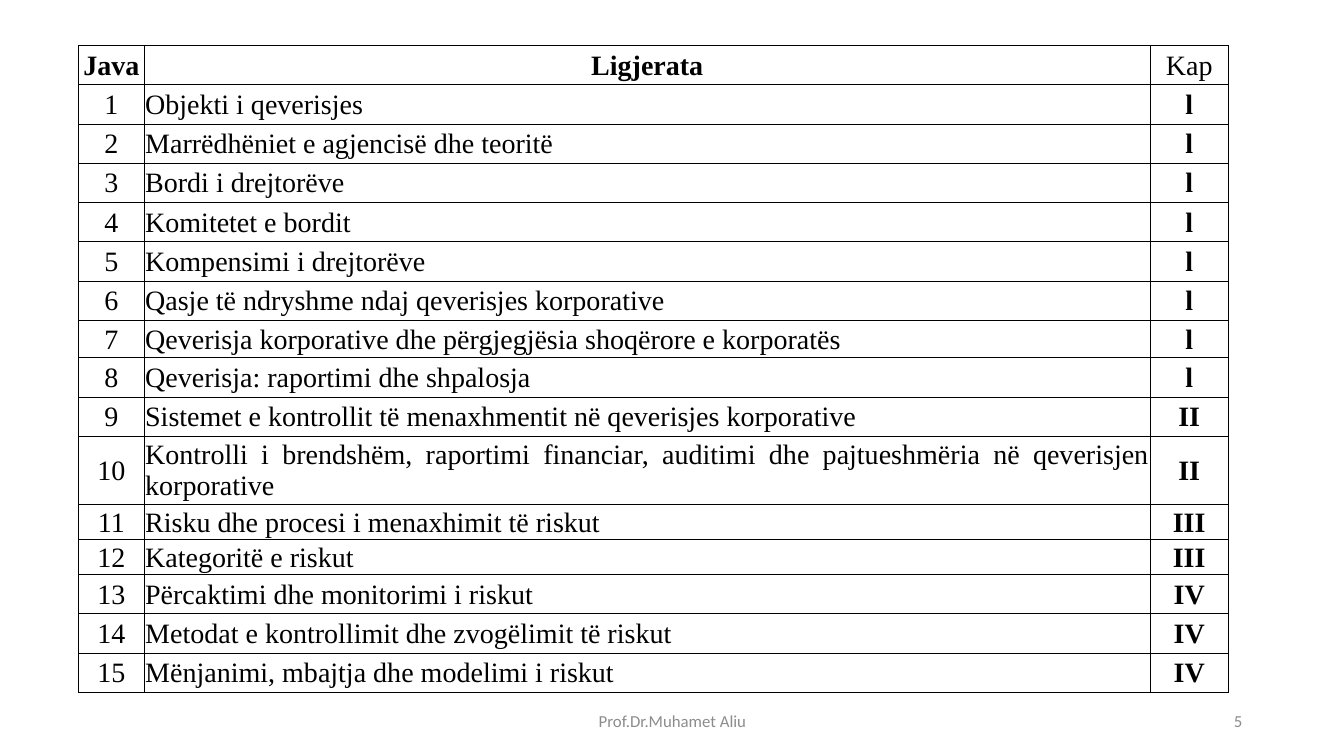
from dataclasses import dataclass

from lxml.etree import SubElement
from pptx import Presentation
from pptx.dml.color import RGBColor
from pptx.enum.text import MSO_ANCHOR, PP_ALIGN
from pptx.oxml.ns import qn
from pptx.util import Inches, Pt


@dataclass(frozen=True)
class Theme:
    ink: str = "000000"
    muted: str = "8C8C8C"
    table_font: str = "Times New Roman"
    footer_font: str = "Calibri"
    table_size: int = 20
    footer_size: int = 12
    border_width: float = 0.5


LECTURES = [
    ("Objekti i qeverisjes", "l"),
    ("Marrëdhëniet e agjencisë dhe teoritë", "l"),
    ("Bordi i drejtorëve", "l"),
    ("Komitetet e bordit", "l"),
    ("Kompensimi i drejtorëve", "l"),
    ("Qasje të ndryshme ndaj qeverisjes korporative", "l"),
    ("Qeverisja korporative dhe përgjegjësia shoqërore e korporatës", "l"),
    ("Qeverisja: raportimi dhe shpalosja", "l"),
    ("Sistemet e kontrollit të menaxhmentit në qeverisjes korporative", "II"),
    ("Kontrolli i brendshëm, raportimi financiar, auditimi dhe "
     "pajtueshmëria në qeverisjen korporative", "II"),
    ("Risku dhe procesi i menaxhimit të riskut", "III"),
    ("Kategoritë e riskut", "III"),
    ("Përcaktimi dhe monitorimi i riskut", "IV"),
    ("Metodat e kontrollimit dhe zvogëlimit të riskut", "IV"),
    ("Mënjanimi, mbajtja dhe modelimi i riskut", "IV"),
]
COLUMN_WIDTHS = (0.65, 9.98, 0.77)
ROW_HEIGHT = 0.39
SPECIAL_HEIGHTS = {7: 0.37, 10: 0.58, 11: 0.35, 12: 0.32}


class SlideBuilder:
    def __init__(self, page, theme):
        self.page = page
        self.theme = theme

    def set_text(self, frame, text, align, font, size, color, bold=False):
        frame.text = text
        para = frame.paragraphs[0]
        para.alignment = align
        for span in para.runs:
            span.font.name = font
            span.font.size = Pt(size)
            span.font.bold = bold
            span.font.color.rgb = RGBColor.from_string(color)

    def footer(self, left, width, text, align):
        box = self.page.shapes.add_textbox(
            Inches(left), Inches(6.95), Inches(width), Inches(0.4))
        frame = box.text_frame
        frame.word_wrap = True
        frame.vertical_anchor = MSO_ANCHOR.MIDDLE
        self.set_text(frame, text, align, self.theme.footer_font,
                      self.theme.footer_size, self.theme.muted)

    def border(self, cell):
        properties = cell._tc.get_or_add_tcPr()
        for position, side in enumerate(("a:lnL", "a:lnR", "a:lnT", "a:lnB")):
            line = SubElement(properties, qn(side), w=str(Pt(self.theme.border_width)))
            fill = SubElement(line, qn("a:solidFill"))
            SubElement(fill, qn("a:srgbClr"), val=self.theme.ink)
            # Borders must precede the cell fill in the XML.
            properties.insert(position, line)

    def cell(self, cell, text, align, bold):
        cell.fill.background()
        cell.vertical_anchor = MSO_ANCHOR.MIDDLE
        cell.margin_left = cell.margin_right = cell.margin_top = Inches(0.01)
        cell.margin_bottom = 0
        self.set_text(cell.text_frame, text, align, self.theme.table_font,
                      self.theme.table_size, self.theme.ink, bold)
        self.border(cell)

    def table(self, left, top, widths, heights, rows):
        table = self.page.shapes.add_table(
            len(rows), len(widths), Inches(left), Inches(top),
            Inches(sum(widths)), Inches(sum(heights))).table
        for column, width in zip(table.columns, widths):
            column.width = Inches(width)
        for row, height in zip(table.rows, heights):
            row.height = Inches(height)
        for r, values in enumerate(rows):
            for c, text in enumerate(values):
                is_header, is_chapter = r == 0, c == 2
                is_title = c == 1 and not is_header
                align = PP_ALIGN.JUSTIFY if is_title else PP_ALIGN.CENTER
                self.cell(table.cell(r, c), text, align, is_header != is_chapter)


def main():
    deck = Presentation()
    deck.slide_width, deck.slide_height = Inches(13.33), Inches(7.5)
    builder = SlideBuilder(deck.slides.add_slide(deck.slide_layouts[6]), Theme())

    builder.footer(4.42, 4.5, "Prof.Dr.Muhamet Aliu", PP_ALIGN.CENTER)
    builder.footer(9.42, 3, "5", PP_ALIGN.RIGHT)

    rows = [("Java", "Ligjerata", "Kap")]
    rows += [(str(week), title, chapter)
             for week, (title, chapter) in enumerate(LECTURES, 1)]
    heights = [SPECIAL_HEIGHTS.get(index, ROW_HEIGHT) for index in range(len(rows))]
    builder.table(0.78, 0.45, COLUMN_WIDTHS, heights, rows)
    deck.save("out.pptx")


if __name__ == "__main__":
    main()
